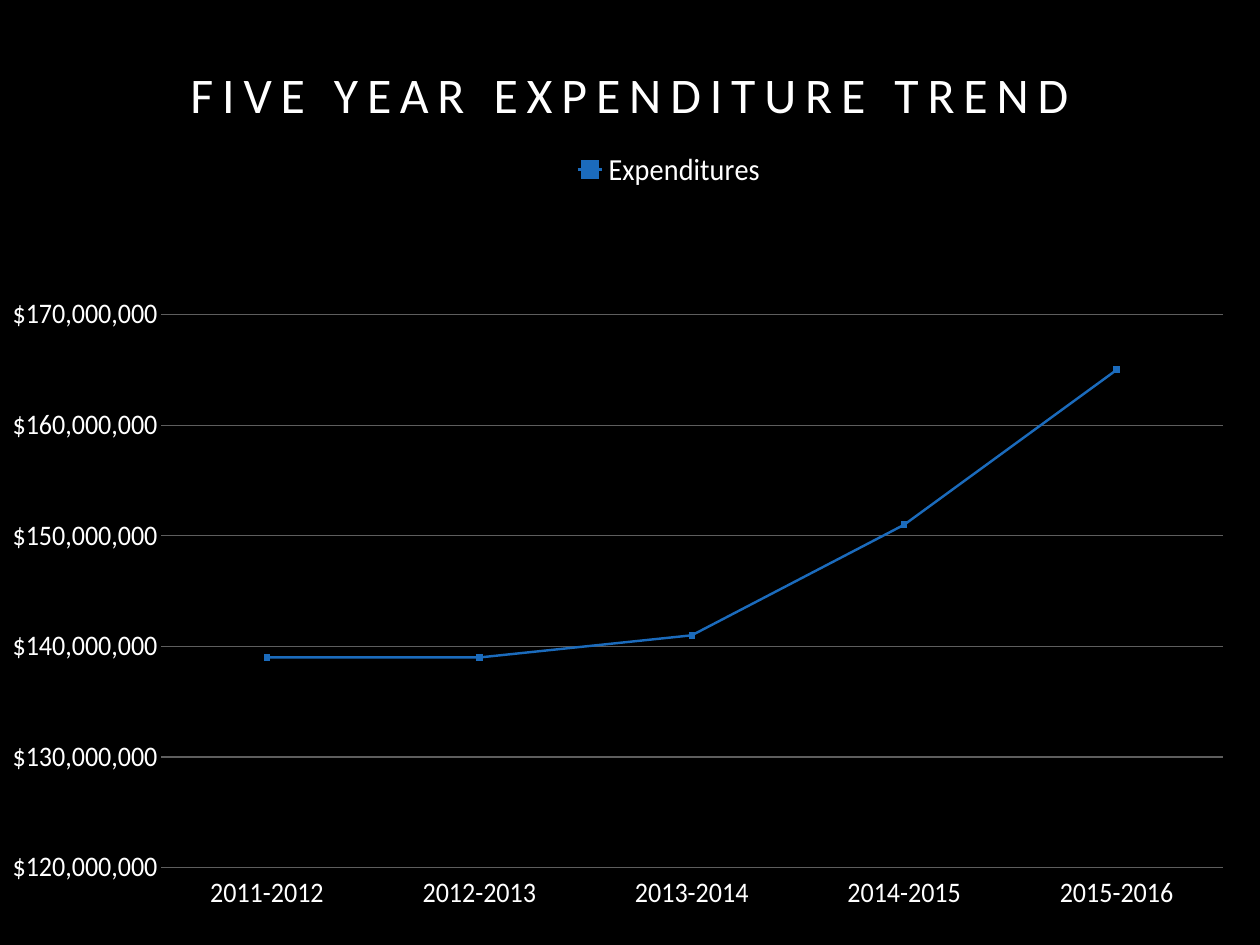
import pptx
import pptx.chart.data
import pptx.dml.color
import pptx.enum.chart
import pptx.enum.text
import pptx.oxml
import pptx.oxml.ns
import pptx.util

Cm = pptx.util.Cm
Pt = pptx.util.Pt

TITLE = "FIVE YEAR EXPENDITURE TREND"
SERIES_NAME = "Expenditures"
EXPENDITURES = {
    "2011-2012": 139_000_000,
    "2012-2013": 139_000_000,
    "2013-2014": 141_000_000,
    "2014-2015": 151_000_000,
    "2015-2016": 165_000_000,
}
AXIS_RANGE = (120_000_000, 170_000_000)
AXIS_STEP = 10_000_000
CURRENCY = '"$"#,##0'

SLIDE_SIZE = (36.12, 27.1)
TITLE_BOX = (1.83, 1.68, 32.46, 3.96)
CHART_BOX = (0.36, 3.73, 34.85, 22.38)
PLOT_LAYOUT = {"x": 0.005, "y": 0.247, "w": 0.99, "h": 0.74}
LEGEND_LAYOUT = {"x": 0.385, "y": 0.02}

FONT = "Calibri"
BLACK, WHITE, BLUE, GRAY = "000000", "FFFFFF", "1B6BBC", "5E5E5E"


def paint(color_holder, color):
    if hasattr(color_holder, "solid"):
        color_holder.solid()
        color_holder = color_holder.fore_color
    else:
        color_holder = color_holder.color
    color_holder.rgb = pptx.dml.color.RGBColor.from_string(color)


def style_font(font, size):
    font.name = FONT
    font.size = Pt(size)
    font.bold = False
    paint(font, WHITE)


def add_title(slide):
    box = slide.shapes.add_textbox(*map(Cm, TITLE_BOX))
    frame = box.text_frame
    frame.word_wrap = True
    frame.margin_left = frame.margin_right = Cm(0.15)
    frame.margin_top = frame.margin_bottom = Cm(0.15)
    paragraph = frame.paragraphs[0]
    paragraph.alignment = pptx.enum.text.PP_ALIGN.CENTER
    run = paragraph.add_run()
    run.text = TITLE
    style_font(paragraph.font, 40.5)
    run.font.size = Pt(40.5)
    run.font._element.set("spc", "720")


def style_axis(axis):
    axis.major_tick_mark = pptx.enum.chart.XL_TICK_MARK.NONE
    axis.minor_tick_mark = pptx.enum.chart.XL_TICK_MARK.NONE
    axis.format.line.fill.background()
    style_font(axis.tick_labels.font, 24)


def set_layout(element, index, settings):
    for layout in element.findall(pptx.oxml.ns.qn("c:layout")):
        element.remove(layout)
    children = "".join(f'<c:{name} val="{value}"/>' for name, value in settings.items())
    element.insert(index, pptx.oxml.parse_xml(
        f'<c:layout {pptx.oxml.ns.nsdecls("c")}>'
        f"<c:manualLayout>{children}</c:manualLayout></c:layout>"))


def add_expenditure_chart(slide):
    data = pptx.chart.data.CategoryChartData(number_format=CURRENCY)
    data.categories = EXPENDITURES.keys()
    data.add_series(SERIES_NAME, EXPENDITURES.values())
    chart = slide.shapes.add_chart(
        pptx.enum.chart.XL_CHART_TYPE.LINE_MARKERS, *map(Cm, CHART_BOX), data).chart
    chart.has_title = False
    style_font(chart.font, 10)
    chart.plots[0].vary_by_categories = False

    chart.has_legend = True
    chart.legend.position = pptx.enum.chart.XL_LEGEND_POSITION.TOP
    chart.legend.include_in_layout = True
    style_font(chart.legend.font, 26)

    edges = {"xMode": "edge", "yMode": "edge"}
    chart_element = chart._chartSpace.chart
    set_layout(chart_element.plotArea, 0, {"layoutTarget": "inner", **edges, **PLOT_LAYOUT})
    set_layout(chart_element.find(pptx.oxml.ns.qn("c:legend")), 1, {**edges, **LEGEND_LAYOUT})

    style_axis(chart.category_axis)
    chart.category_axis.tick_label_position = pptx.enum.chart.XL_TICK_LABEL_POSITION.LOW
    value_axis = chart.value_axis
    style_axis(value_axis)
    value_axis.minimum_scale, value_axis.maximum_scale = AXIS_RANGE
    value_axis.major_unit = AXIS_STEP
    value_axis.tick_labels.number_format = CURRENCY
    value_axis.tick_labels.number_format_is_linked = False
    value_axis.has_major_gridlines = True
    gridline = value_axis.major_gridlines.format.line
    paint(gridline, GRAY)
    gridline.width = Pt(1)

    series = chart.plots[0].series[0]
    series.smooth = False
    paint(series.format.line, BLUE)
    series.format.line.width = Pt(2.25)
    series.marker.style = pptx.enum.chart.XL_MARKER_STYLE.SQUARE
    series.marker.size = 5
    paint(series.marker.format.fill, BLUE)
    paint(series.marker.format.line, BLUE)


def main():
    presentation = pptx.Presentation()
    presentation.slide_width, presentation.slide_height = map(Cm, SLIDE_SIZE)
    slide = presentation.slides.add_slide(presentation.slide_layouts[6])
    paint(slide.background.fill, BLACK)
    add_title(slide)
    add_expenditure_chart(slide)
    presentation.save("out.pptx")


if __name__ == "__main__":
    main()
